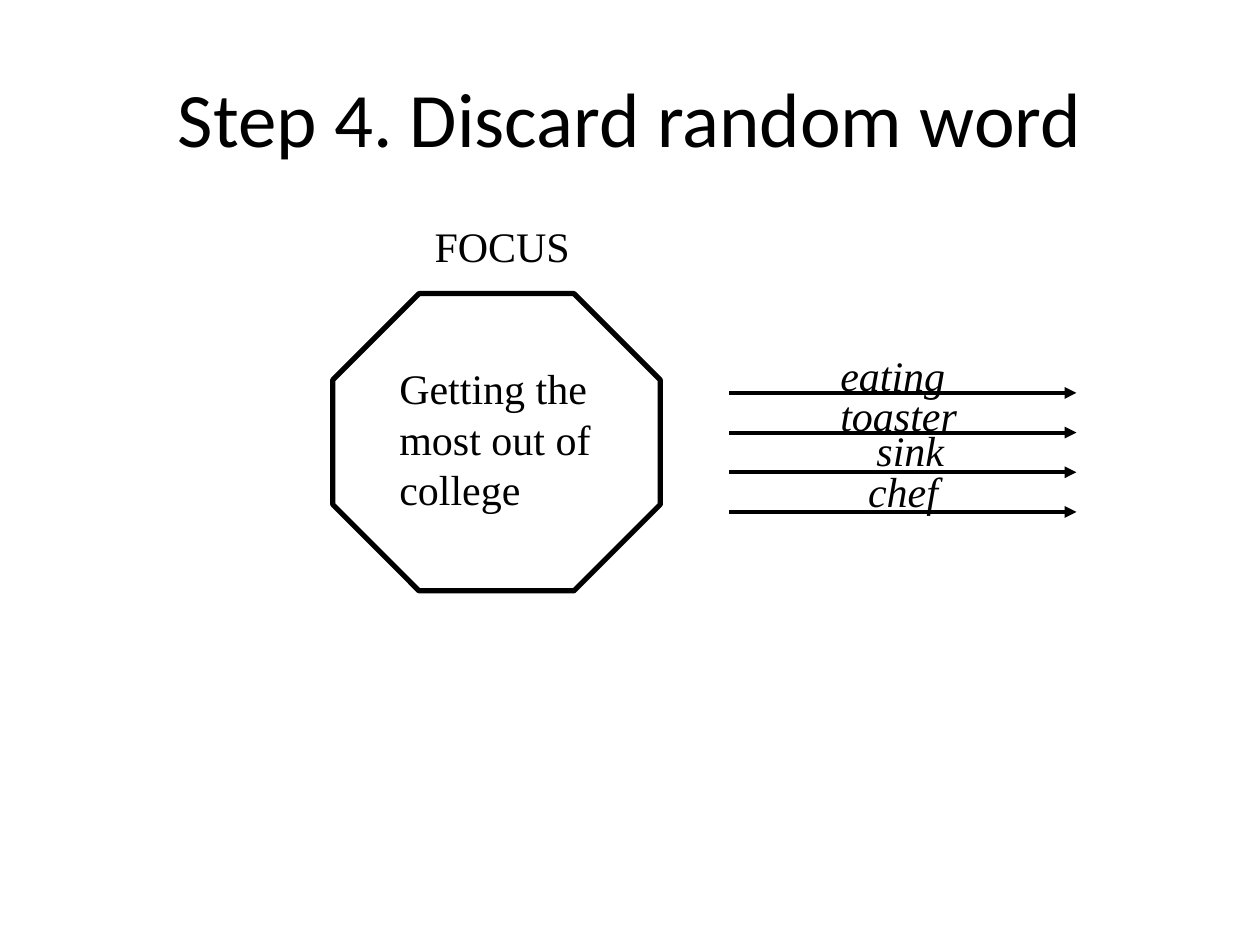
from lxml.etree import SubElement
from pptx import Presentation
from pptx.dml.color import RGBColor
from pptx.enum.shapes import MSO_CONNECTOR, MSO_SHAPE
from pptx.enum.text import MSO_ANCHOR, MSO_AUTO_SIZE, PP_ALIGN
from pptx.oxml.ns import qn
from pptx.util import Cm, Pt

BLACK = RGBColor(0, 0, 0)

prs = Presentation()
prs.slide_width, prs.slide_height = Cm(25.4), Cm(19.05)
s = prs.slides.add_slide(prs.slide_layouts[6])


def add_text(lines, left, top, width, height, size=24, font="Times New Roman", italic=False):
    tf = s.shapes.add_textbox(Cm(left), Cm(top), Cm(width), Cm(height)).text_frame
    tf.word_wrap = False
    tf.auto_size = MSO_AUTO_SIZE.SHAPE_TO_FIT_TEXT
    tf.text = "\n".join(lines)
    for p in tf.paragraphs:
        p.font.size = Pt(size)
        p.font.name = font
        p.font.italic = italic
        p.font.color.rgb = BLACK
    return tf


# Title
title = add_text(["Step 4. Discard random word"], 1.27, 0.76, 22.86, 3.18, 44, "Calibri")
title.auto_size = MSO_AUTO_SIZE.NONE
title.word_wrap = True
title.vertical_anchor = MSO_ANCHOR.MIDDLE
title.paragraphs[0].alignment = PP_ALIGN.CENTER

# Focus octagon
octagon = s.shapes.add_shape(MSO_SHAPE.OCTAGON, Cm(6.71), Cm(5.92), Cm(6.6), Cm(5.99))
octagon.adjustments[0] = 0.29
octagon.shadow.inherit = False
octagon.fill.background()
octagon.line.color.rgb = BLACK
octagon.line.width = Pt(3)
add_text(["FOCUS"], 8.51, 4.32, 3.25, 1.27)
add_text(["Getting the", "most out of", "college"], 7.8, 7.19, 4.5, 3.33)

# Arrows, evenly spaced, one under each random word
for i in range(4):
    y = Cm(7.92 + 0.8 * i)
    arrow = s.shapes.add_connector(MSO_CONNECTOR.STRAIGHT, Cm(14.7), y, Cm(21.7), y)
    arrow.line.color.rgb = BLACK
    arrow.line.width = Pt(2.25)
    SubElement(arrow.line._get_or_add_ln(), qn("a:tailEnd"), type="triangle")
    SubElement(arrow._element.spPr, qn("a:effectLst"))

# Random words
for word, left, top, width in [
    ("eating", 16.69, 6.93, 2.62),
    ("toaster", 16.69, 7.72, 2.87),
    ("sink", 17.42, 8.43, 1.88),
    ("chef", 17.25, 9.25, 1.93),
]:
    add_text([word], left, top, width, 1.27, italic=True)

prs.save("out.pptx")
